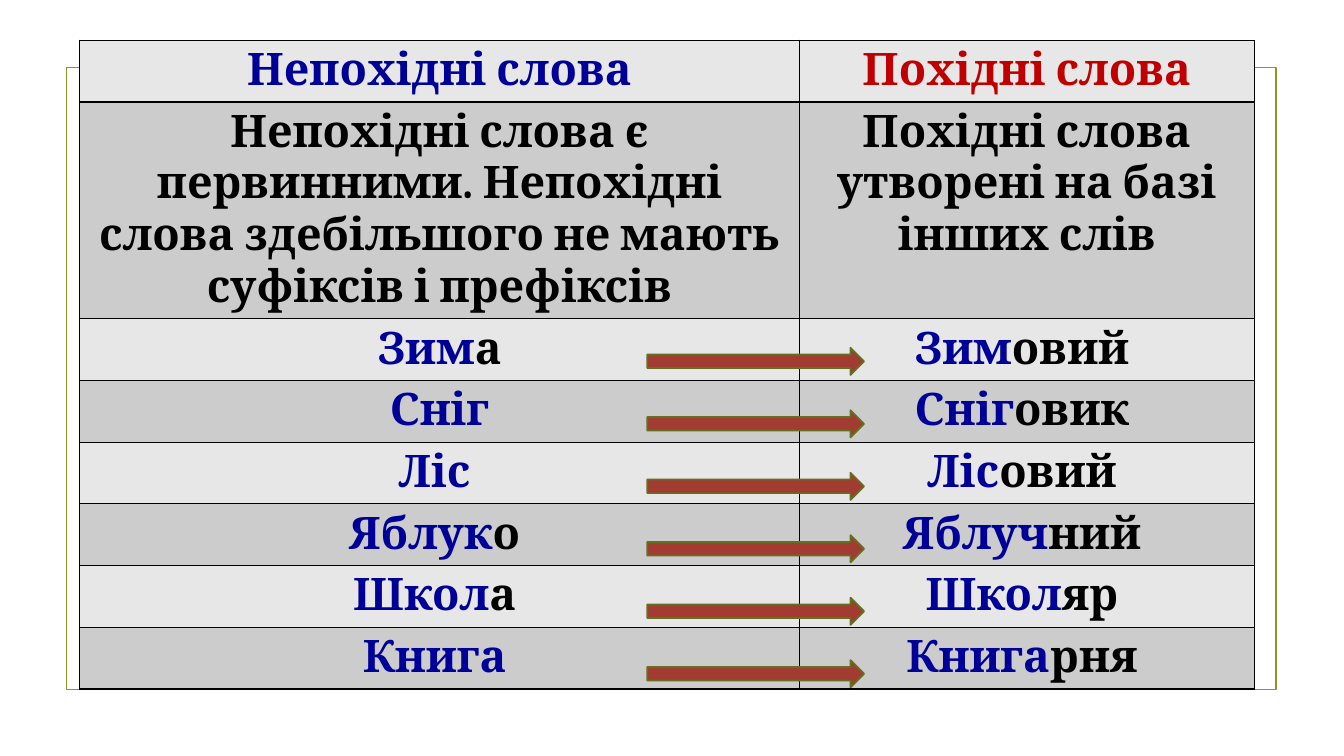
from lxml import etree
from pptx import Presentation
from pptx.dml.color import RGBColor
from pptx.enum.shapes import MSO_SHAPE
from pptx.enum.text import PP_ALIGN
from pptx.oxml.ns import qn
from pptx.util import Inches, Pt

RECTANGLE = MSO_SHAPE.RECTANGLE
RIGHT_ARROW = MSO_SHAPE.RIGHT_ARROW
CENTER = PP_ALIGN.CENTER

BLUE, RED, BLACK = "000099", "C00000", "000000"
BANDS = ("E7E7E7", "CCCCCC")

HEADINGS = [
    [("Непохідні слова", BLUE)],
    [("Похідні слова", RED)],
]
DEFINITIONS = [
    [("Непохідні слова є первинними. Непохідні слова здебільшого "
      "не мають суфіксів і префіксів", BLACK)],
    [("Похідні слова утворені на базі інших слів", BLACK)],
]
WORD_PAIRS = [
    (("Зим", "а"), ("Зим", "овий ")),
    (("Сніг", ""), ("Сніг", "овик ")),
    (("Ліс ", ""), ("Ліс", "овий ")),
    (("Яблук", "о "), ("Яблуч", "ний ")),
    (("Школ", "а "), ("Школ", "яр ")),
    (("Книга ", ""), ("Книга", "рня ")),
]
COLUMN_WIDTHS = (7.14, 4.51)
ROW_HEIGHT, DEFINITION_HEIGHT = 0.61, 2.15
ARROW_TOP, ARROW_STEP = 3.45, 0.62


def color(hex_value):
    return RGBColor.from_string(hex_value)


def add_outlined_shape(slide, preset, left, top, width, height, line, fill=None):
    shape = slide.shapes.add_shape(
        preset, Inches(left), Inches(top), Inches(width), Inches(height))
    shape.shadow.inherit = False
    if fill:
        shape.fill.solid()
        shape.fill.fore_color.rgb = color(fill)
    else:
        shape.fill.background()
    shape.line.color.rgb = color(line)
    shape.line.width = Pt(1.25)


def add_borders(cell):
    properties = cell._tc.get_or_add_tcPr()
    for position, side in enumerate(("lnL", "lnR", "lnT", "lnB")):
        border = etree.Element(qn(f"a:{side}"), w=str(Pt(1)))
        fill = etree.SubElement(border, qn("a:solidFill"))
        etree.SubElement(fill, qn("a:srgbClr"), val=BLACK)
        properties.insert(position, border)


def fill_cell(cell, parts, band):
    cell.fill.solid()
    cell.fill.fore_color.rgb = color(band)
    add_borders(cell)
    paragraph = cell.text_frame.paragraphs[0]
    paragraph.alignment = CENTER
    for text, text_color in parts:
        run = paragraph.add_run()
        run.text = text
        run.font.name = "Cambria"
        run.font.size = Pt(32)
        run.font.bold = True
        run.font.color.rgb = color(text_color)


def word_parts(stem, ending):
    return [(text, shade) for text, shade in ((stem, BLUE), (ending, BLACK)) if text]


def add_word_table(slide):
    rows = [HEADINGS, DEFINITIONS]
    rows += [[word_parts(*word) for word in pair] for pair in WORD_PAIRS]
    heights = [ROW_HEIGHT, DEFINITION_HEIGHT] + [ROW_HEIGHT] * len(WORD_PAIRS)
    table = slide.shapes.add_table(
        len(rows), len(COLUMN_WIDTHS), Inches(0.79), Inches(0.4),
        Inches(sum(COLUMN_WIDTHS)), Inches(sum(heights))).table
    for column, width in zip(table.columns, COLUMN_WIDTHS):
        column.width = Inches(width)
    for index, (row, height, contents) in enumerate(zip(table.rows, heights, rows)):
        row.height = Inches(height)
        for cell, parts in zip(row.cells, contents):
            fill_cell(cell, parts, BANDS[index % 2])


def main():
    presentation = Presentation()
    presentation.slide_width = Inches(13.33)
    presentation.slide_height = Inches(7.5)
    slide = presentation.slides.add_slide(presentation.slide_layouts[6])
    add_outlined_shape(slide, RECTANGLE, 0.66, 0.67, 12, 6.17, "83992A")
    add_word_table(slide)
    for index in range(len(WORD_PAIRS)):
        add_outlined_shape(slide, RIGHT_ARROW, 6.42, ARROW_TOP + index * ARROW_STEP,
                           2.15, 0.27, "61711F", "A23C33")
    presentation.save("out.pptx")


if __name__ == "__main__":
    main()
